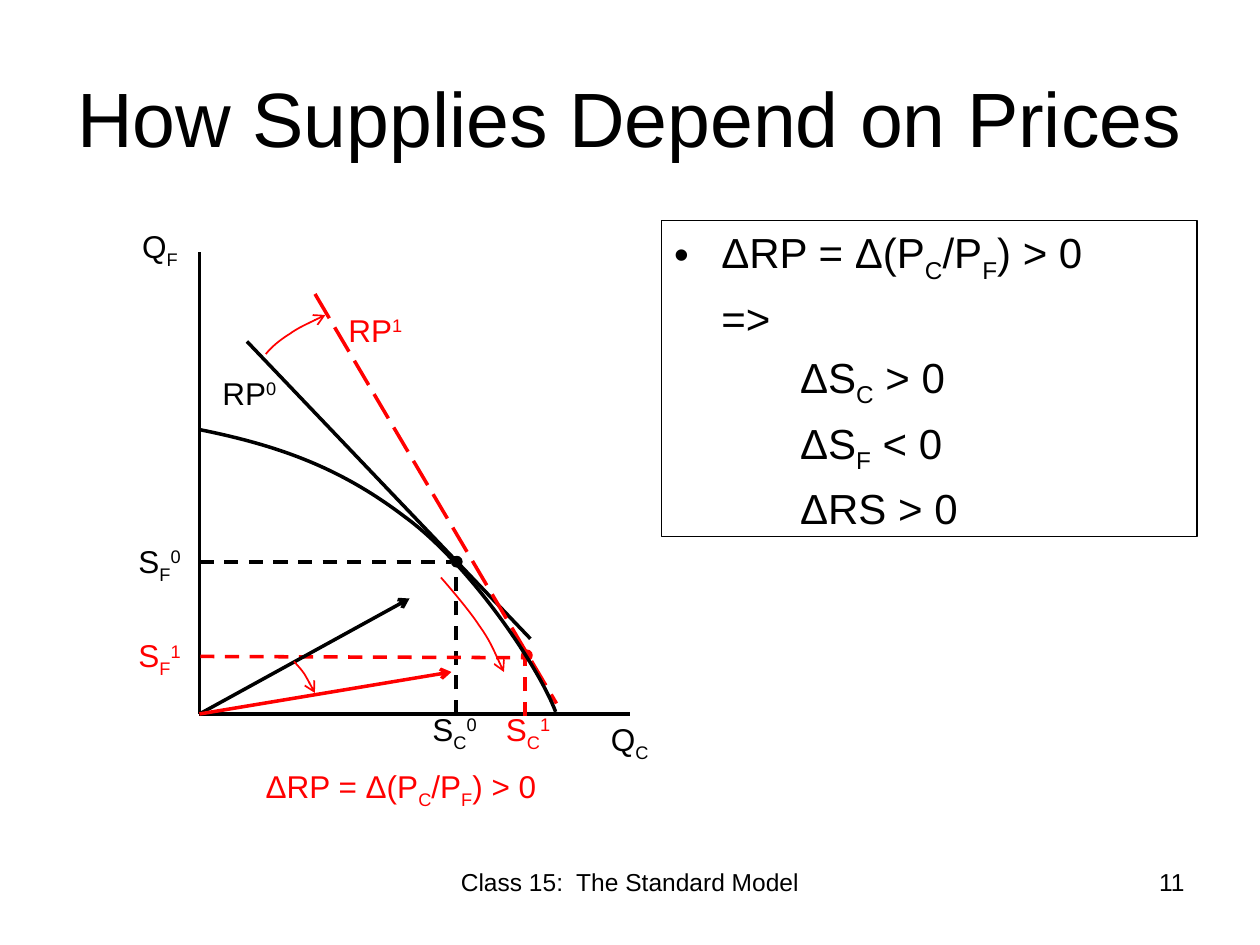
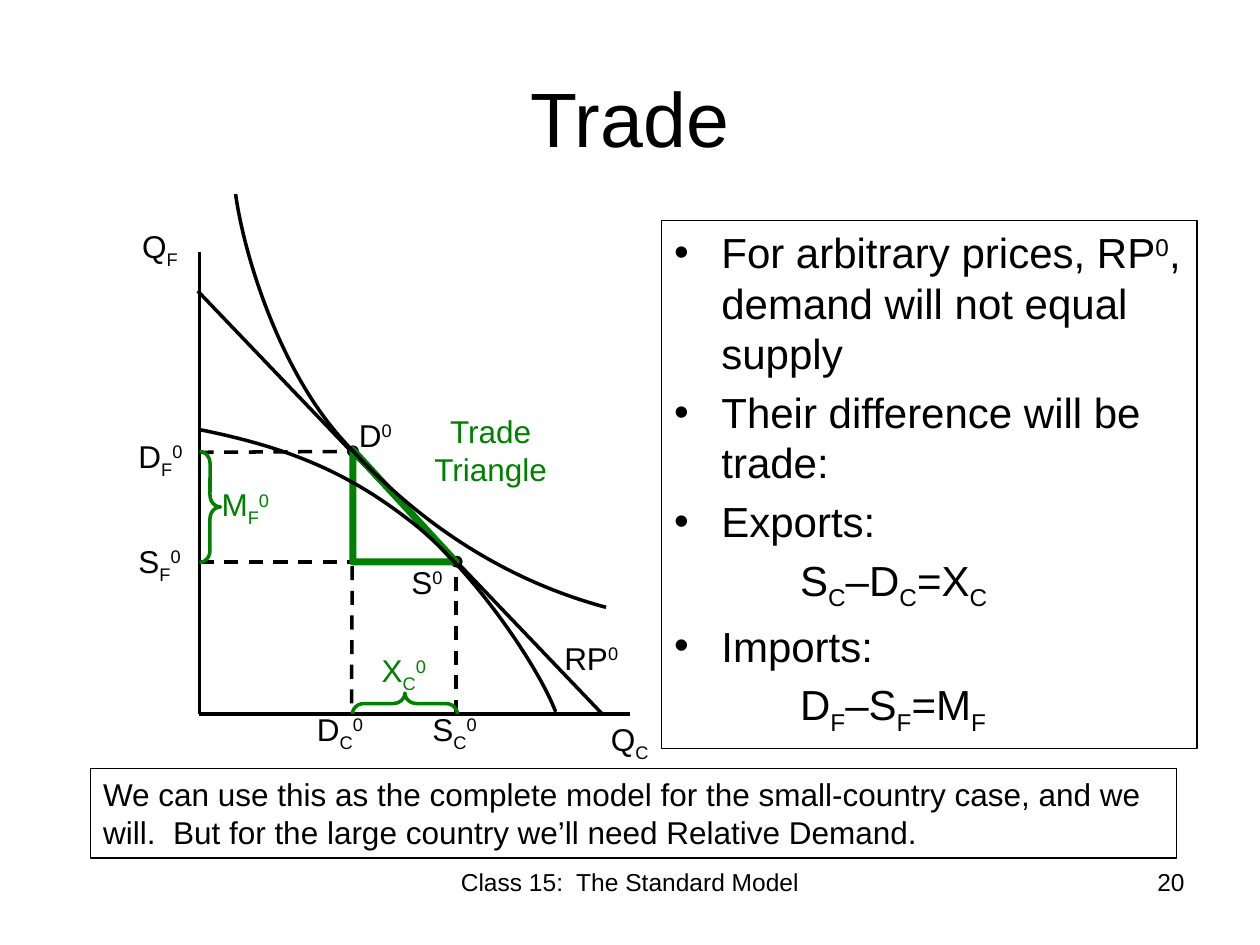
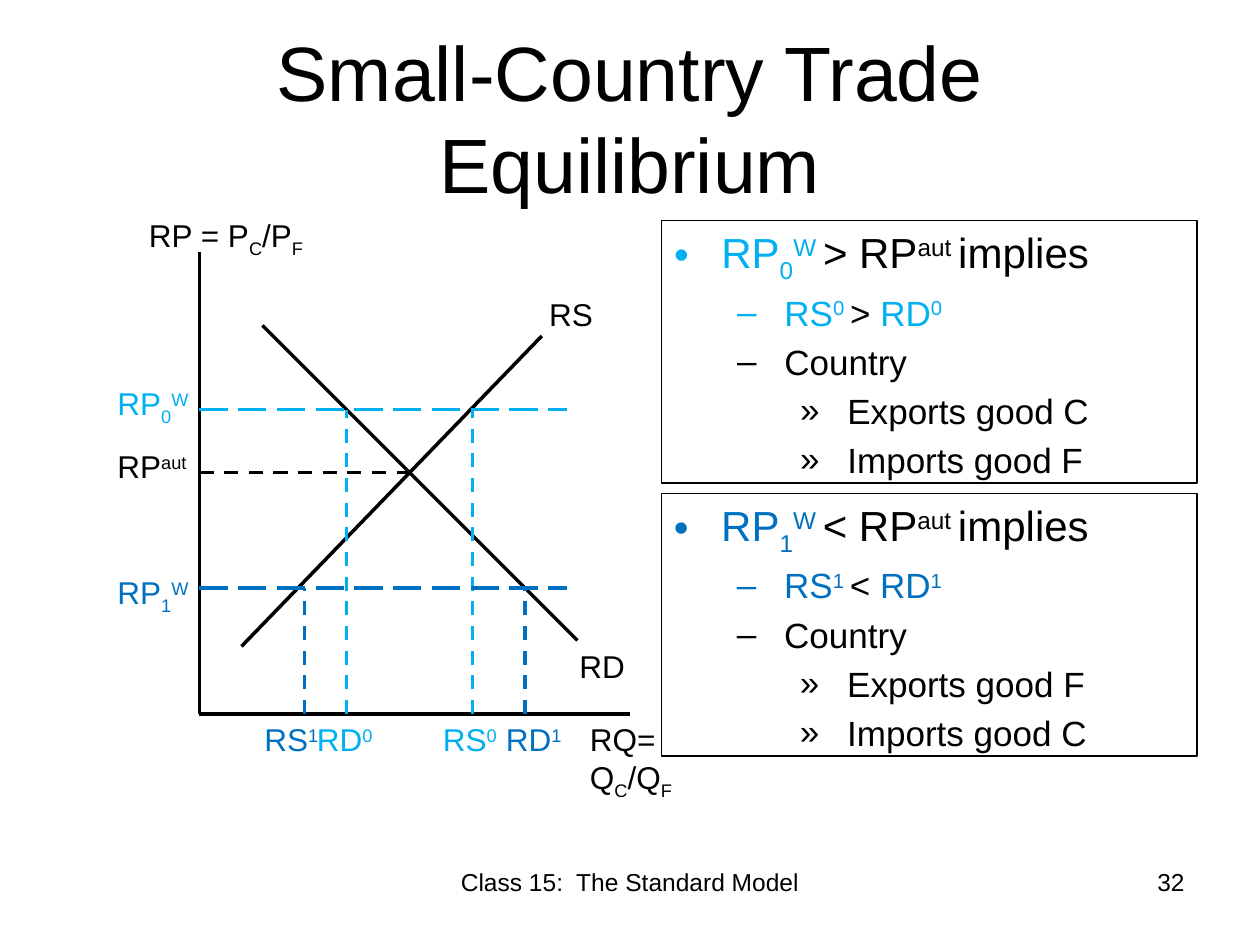
from dataclasses import dataclass

from lxml.etree import SubElement
from pptx import Presentation
from pptx.dml.color import RGBColor
from pptx.enum.dml import MSO_LINE as Dash
from pptx.enum.shapes import MSO_CONNECTOR as Link, MSO_SHAPE as Kind
from pptx.enum.text import MSO_ANCHOR as Anchor, MSO_AUTO_SIZE as Fit, PP_ALIGN as Align
from pptx.oxml.ns import qn
from pptx.util import Inches, Pt


@dataclass(frozen=True)
class Theme:
    face: str = "Arial"
    ink: str = "000000"
    red: str = "FF0000"
    green: str = "008000"
    sky: str = "00B0F0"
    blue: str = "0070C0"
    title: int = 44
    body: int = 24
    sub: int = 20
    label: int = 18
    foot: int = 14
    thin: float = 0.75
    sweep: float = 1
    line: float = 2
    heavy: float = 4


T = Theme()

# Shared places and words: left, top, width, height
TITLE = (0.5, 0.3, 9, 1.25)
FOOT = (3.42, 6.83, 3.17, 0.52)
PAGE = (7.17, 6.83, 2.33, 0.52)
FOOTER = "Class 15:  The Standard Model"
X0, Y0 = 1.58, 5.67
DOT = 0.08
LABEL = (0.75, 0.4)
HANG = 3 / 8

# Body line styles: level, left margin, bullet, size
STYLES = {
    "dot": (0, HANG, "•", T.body),
    "more": (0, HANG, None, T.body),
    "deep": (0, 1, None, T.body),
    "dash": (1, HANG + 0.5, "–", T.sub),
    "item": (2, HANG + 1, "»", T.sub),
}

# Lines: x1, y1, x2, y2, colour, dash, arrow
AXES = [
    (X0, Y0, 5, Y0, T.ink, None, False),
    (X0, Y0, X0, 2, T.ink, None, False),
]
SUPPLY = [
    (X0, 4.46, 3.58, 4.46, T.ink, Dash.DASH, False),
    (3.62, Y0, 3.62, 4.42, T.ink, Dash.DASH, False),
]

# Curves: start and Bezier controls, colour, width, arrow
FRONTIER = ([(1.58, 3.41), (2.23, 3.54), (2.71, 3.72), (3.21, 4.1),
             (3.72, 4.47), (4.27, 5.28), (4.41, 5.65)], T.ink, T.line, False)
TASTES = ([(4.81, 4.82), (3.88, 4.57), (3.2, 4.03), (2.71, 3.48),
           (2.22, 2.93), (1.94, 2.04), (1.87, 1.54)], T.ink, T.line, False)
SWEEPS = [
    [(2.11, 2.81), (2.16, 2.75), (2.22, 2.7), (2.3, 2.65),
     (2.37, 2.6), (2.58, 2.5), (2.58, 2.5)],
    [(3.5, 4.58), (3.5, 4.58), (3.72, 4.83), (3.8, 4.96),
     (3.89, 5.08), (3.94, 5.21), (4, 5.33)],
    [(2.33, 5.25), (2.36, 5.28), (2.39, 5.31), (2.42, 5.35),
     (2.44, 5.39), (2.5, 5.5), (2.5, 5.5)],
]

# Labels: text, left, top, colour, then width and height if special.
# {_x} is a subscript and {^x} a superscript.
NAMES = [
    ("Q{_C}", 4.75, 5.67, T.ink, 0.75, 0.71),
    ("Q{_F}", 1.03, 1.75, T.ink, 0.75, 0.71),
    ("S{_C}{^0}", 3.33, 5.58, T.ink),
    ("S{_F}{^0}", 1, 4.25, T.ink),
]


def implied(tone, n, sign, out, into):
    """Body lines for one world price."""
    return [
        ("dot", [(f"RP{{_{n}}}{{^W }}", tone), (f"{sign} RP{{^aut }}implies", T.ink)]),
        ("dash", [(f"RS{{^{n} }}", tone), (f"{sign} ", T.ink), (f"RD{{^{n}}}", tone)]),
        ("dash", "Country"),
        ("item", f"Exports good {out}"),
        ("item", f"Imports good {into}"),
    ]


def world(tone, y, *drops):
    """Price line with its drops to the axis."""
    return [(X0, y, 4.5, y, tone, Dash.LONG_DASH, False)] + [
        (x, Y0, x, y, tone, Dash.DASH, False) for x in drops]


SLIDES = [
    {
        "title": "How Supplies Depend on Prices",
        "page": 11,
        "boxes": [((5.25, 1.75, 4.25, 2.51), [
            ("dot", "ΔRP = Δ(P{_C}/P{_F}) > 0"),
            ("more", "=>"),
            ("deep", "ΔS{_C} > 0"),
            ("deep", "ΔS{_F} < 0"),
            ("deep", "ΔRS > 0"),
        ])],
        "lines": AXES + SUPPLY + [
            (1.96, 2.71, 4.21, 5.07, T.ink, None, False),
            (2.5, 2.33, 4.42, 5.58, T.red, Dash.LONG_DASH, False),
            (1.59, 5.21, 4.16, 5.22, T.red, Dash.DASH, False),
            (4.17, 5.68, 4.17, 5.19, T.red, Dash.DASH, False),
            (X0, Y0, 3.25, 4.75, T.ink, None, True),
            (X0, Y0, 3.58, 5.33, T.red, None, True),
        ],
        "dots": [(4.14, 5.16, T.red), (3.58, 4.42, T.ink)],
        "curves": [FRONTIER] + [(pts, T.red, T.sweep, True) for pts in SWEEPS],
        "labels": NAMES + [
            ("RP{^0}", 1.67, 2.92, T.ink, 0.72),
            ("RP{^1}", 2.67, 2.42, T.red, 0.72),
            ("S{_F}{^1}", 1, 5, T.red),
            ("S{_C}{^1}", 3.92, 5.58, T.red),
            ("ΔRP = Δ(P{_C}/P{_F}) > 0", 2.01, 6.04, T.red, 3.53),
        ],
    },
    {
        "title": "Trade",
        "page": 20,
        "boxes": [((5.25, 1.75, 4.25, 4.19), [
            ("dot", "For arbitrary prices, RP{^0}, demand will not equal supply"),
            ("dot", "Their difference will be trade:"),
            ("dot", "Exports:"),
            ("deep", "S{_C}–D{_C}=X{_C}"),
            ("dot", "Imports:"),
            ("deep", "D{_F}–S{_F}=M{_F}"),
        ])],
        "lines": AXES + SUPPLY + [
            (1.57, 2.31, 4.78, Y0, T.ink, None, False),
            (X0, 3.59, 2.76, 3.58, T.ink, Dash.DASH, False),
            (2.79, 5.58, 2.8, 3.59, T.ink, Dash.DASH, False),
        ],
        "dots": [(2.76, 3.54, T.ink), (3.58, 4.42, T.ink)],
        # Kind, place, turn, line width
        "gaps": [
            (Kind.RIGHT_BRACE, (1.58, 3.58, 0.17, 0.88), 0, T.line),
            (Kind.RIGHT_BRACE, (3.13, 5.17, 0.17, 0.83), 270, T.line),
            (Kind.RIGHT_TRIANGLE, (2.8, 3.57, 0.82, 0.89), 0, T.heavy),
        ],
        "curves": [FRONTIER, TASTES],
        "labels": NAMES + [
            ("D{_C}{^0}", 2.42, 5.58, T.ink),
            ("D{_F}{^0}", 1, 3.42, T.ink),
            ("S{^0}", 3.17, 4.42, T.ink),
            ("D{^0}", 2.75, 3.25, T.ink),
            ("RP{^0}", 4.38, 5.02, T.ink, 0.72),
            ("M{_F}{^0}", 1.66, 3.8, T.green),
            ("X{_C}{^0}", 2.93, 5.12, T.green),
        ],
        "centred": ("Trade Triangle", (3.18, 3.22, 1.43, 0.71), T.green),
        "note": ("We can use this as the complete model for the small-country case, "
                 "and we will.  But for the large country we’ll need Relative Demand.",
                 (0.72, 6.1, 8.62, 0.71)),
    },
    {
        "title": "Small-Country Trade Equilibrium",
        "page": 32,
        "boxes": [
            ((5.25, 1.75, 4.25, 2.08), implied(T.sky, 0, ">", "C", "F")),
            ((5.25, 3.92, 4.25, 2.08), implied(T.blue, 1, "<", "F", "C")),
        ],
        "lines": AXES + [
            (2.08, 2.58, 4.58, 5.08, T.ink, None, False),
            (1.92, 5.13, 4.3, 2.67, T.ink, None, False),
            (X0, 3.75, 3.33, 3.75, T.ink, Dash.DASH, False),
        ] + world(T.sky, 3.25, 2.75, 3.75) + world(T.blue, 4.67, 2.42, 4.17),
        "labels": [
            ("RD", 4.5, 5.08, T.ink, 0.57),
            ("RS", 4.26, 2.29, T.ink, 0.55),
            ("RQ= Q{_C}/Q{_F}", 4.58, 5.67, T.ink, 0.92, 0.71),
            ("RP = P{_C}/P{_F}", 1.08, 1.67, T.ink, 1.51),
            ("RP{^aut}", 0.83, 3.5, T.ink, 1.51),
            ("RP{_0}{^W}", 0.83, 3, T.sky, 1.51),
            ("RP{_1}{^W}", 0.83, 4.5, T.blue, 1.51),
            ("RS{^0}", 3.42, 5.67, T.sky, 0.66),
            ("RD{^0}", 2.42, 5.67, T.sky, 0.66),
            ("RS{^1}", 2, 5.67, T.blue, 0.66),
            ("RD{^1}", 3.92, 5.67, T.blue, 0.66),
        ],
    },
]


# Lengths
def snap(value):
    """Length in inches, drawn to the twelfth-inch grid when next to it."""
    cells = value * 12
    near = round(cells)
    return Inches(near / 12 if abs(cells - near) < 0.06 else value)


def snaps(values):
    return [snap(v) for v in values]


# Text
def write(para, text, size, tone=T.ink):
    """Add runs, with {_x} lowered and {^x} raised."""
    for bit in text.replace("}", "{").split("{"):
        if not bit:
            continue
        run = para.add_run()
        shift = {"_": "-25000", "^": "30000"}.get(bit[0])
        run.text = bit[1:] if shift else bit
        font = run.font
        font.name, font.size = T.face, Pt(size)
        font.color.rgb = RGBColor.from_string(tone)
        if shift:
            run._r.get_or_add_rPr().set("baseline", shift)


def place(shape, at):
    shape.left, shape.top, shape.width, shape.height = snaps(at)


def put(slide, text, at, size, tone=T.ink, align=Align.LEFT):
    box = slide.shapes.add_textbox(*snaps(at))
    box.text_frame.word_wrap = True
    para = box.text_frame.paragraphs[0]
    para.alignment = align
    write(para, text, size, tone)
    return box


def fill_body(box, rows):
    frame = box.text_frame
    frame.word_wrap, frame.auto_size = True, Fit.NONE
    frame.vertical_anchor = Anchor.TOP
    for i, (style, spans) in enumerate(rows):
        level, left, mark, size = STYLES[style]
        para = frame.add_paragraph() if i else frame.paragraphs[0]
        para.level, para.space_before = level, Pt(size * 0.2)
        props = para._p.get_or_add_pPr()
        props.set("marL", str(Inches(left)))
        props.set("indent", str(Inches(-HANG if mark else 0)))
        if mark:
            SubElement(props, qn("a:buFont")).set("typeface", T.face)
            SubElement(props, qn("a:buChar")).set("char", mark)
        else:
            SubElement(props, qn("a:buNone"))
        for text, tone in [(spans, T.ink)] if isinstance(spans, str) else spans:
            write(para, text, size, tone)


# Drawing
def stroke(shape, tone, width, dash=None, arrow=False):
    line = shape.line
    line.color.rgb = RGBColor.from_string(tone)
    line.width = Pt(width)
    if dash:
        line.dash_style = dash
    if arrow:
        SubElement(shape._element.spPr.find(qn("a:ln")), qn("a:tailEnd")).set("type", "arrow")


def draw_line(slide, x1, y1, x2, y2, tone, dash, arrow):
    link = slide.shapes.add_connector(Link.STRAIGHT, *snaps((x1, y1, x2, y2)))
    stroke(link, tone, T.line, dash, arrow)
    SubElement(link._element.spPr, qn("a:effectLst"))


def draw_dot(slide, x, y, tone):
    dot = slide.shapes.add_shape(Kind.OVAL, *snaps((x, y, DOT, DOT)))
    dot.shadow.inherit = False
    dot.fill.solid()
    dot.fill.fore_color.rgb = RGBColor.from_string(tone)
    stroke(dot, tone, T.thin)


def draw_gap(slide, kind, at, turn, width):
    gap = slide.shapes.add_shape(kind, *snaps(at))
    gap.shadow.inherit = False
    gap.fill.background()
    gap.rotation = turn
    if kind == Kind.RIGHT_BRACE:
        gap.adjustments[0], gap.adjustments[1] = 0.56, 0.5
    stroke(gap, T.green, width)


def bend(curve):
    """Turn each three straight steps into one Bezier step."""
    track = curve._element.spPr.find(".//" + qn("a:path"))
    steps = track.findall(qn("a:lnTo"))
    for i in range(0, len(steps), 3):
        arc = SubElement(track, qn("a:cubicBezTo"))
        for step in steps[i:i + 3]:
            arc.append(step[0])
            track.remove(step)


def draw_curve(slide, pts, tone, width, arrow):
    first, *rest = [snaps(pt) for pt in pts]
    pen = slide.shapes.build_freeform(*first)
    pen.add_line_segments(rest, close=False)
    curve = pen.convert_to_shape()
    bend(curve)
    curve.shadow.inherit = False
    curve.fill.background()
    stroke(curve, tone, width, arrow=arrow)


def build(deck, data):
    slide = deck.slides.add_slide(deck.slide_layouts[1])

    # Title, footer and page number
    head = slide.shapes.title
    place(head, TITLE)
    head.text_frame.auto_size = Fit.NONE
    head.text_frame.vertical_anchor = Anchor.MIDDLE
    head.text_frame.paragraphs[0].alignment = Align.CENTER
    write(head.text_frame.paragraphs[0], data["title"], T.title)
    put(slide, FOOTER, FOOT, T.foot, align=Align.CENTER)
    put(slide, str(data["page"]), PAGE, T.foot, align=Align.RIGHT)

    # Framed lists
    for i, (at, rows) in enumerate(data["boxes"]):
        box = slide.shapes.add_textbox(0, 0, 0, 0) if i else slide.placeholders[1]
        place(box, at)
        stroke(box, T.ink, T.thin)
        fill_body(box, rows)

    # Diagram
    for key, draw in (("lines", draw_line), ("dots", draw_dot),
                      ("gaps", draw_gap), ("curves", draw_curve)):
        for part in data.get(key, []):
            draw(slide, *part)
    for text, x, y, tone, *size in data["labels"]:
        put(slide, text, (x, y, *size, *LABEL[len(size):]), T.label, tone)
    if "centred" in data:
        text, at, tone = data["centred"]
        put(slide, text, at, T.label, tone, Align.CENTER)
    if "note" in data:
        stroke(put(slide, *data["note"], T.label), T.ink, T.thin)


def main():
    deck = Presentation()
    deck.slide_width, deck.slide_height = Inches(10), Inches(7.5)
    for data in SLIDES:
        build(deck, data)
    deck.save("out.pptx")


if __name__ == "__main__":
    main()
